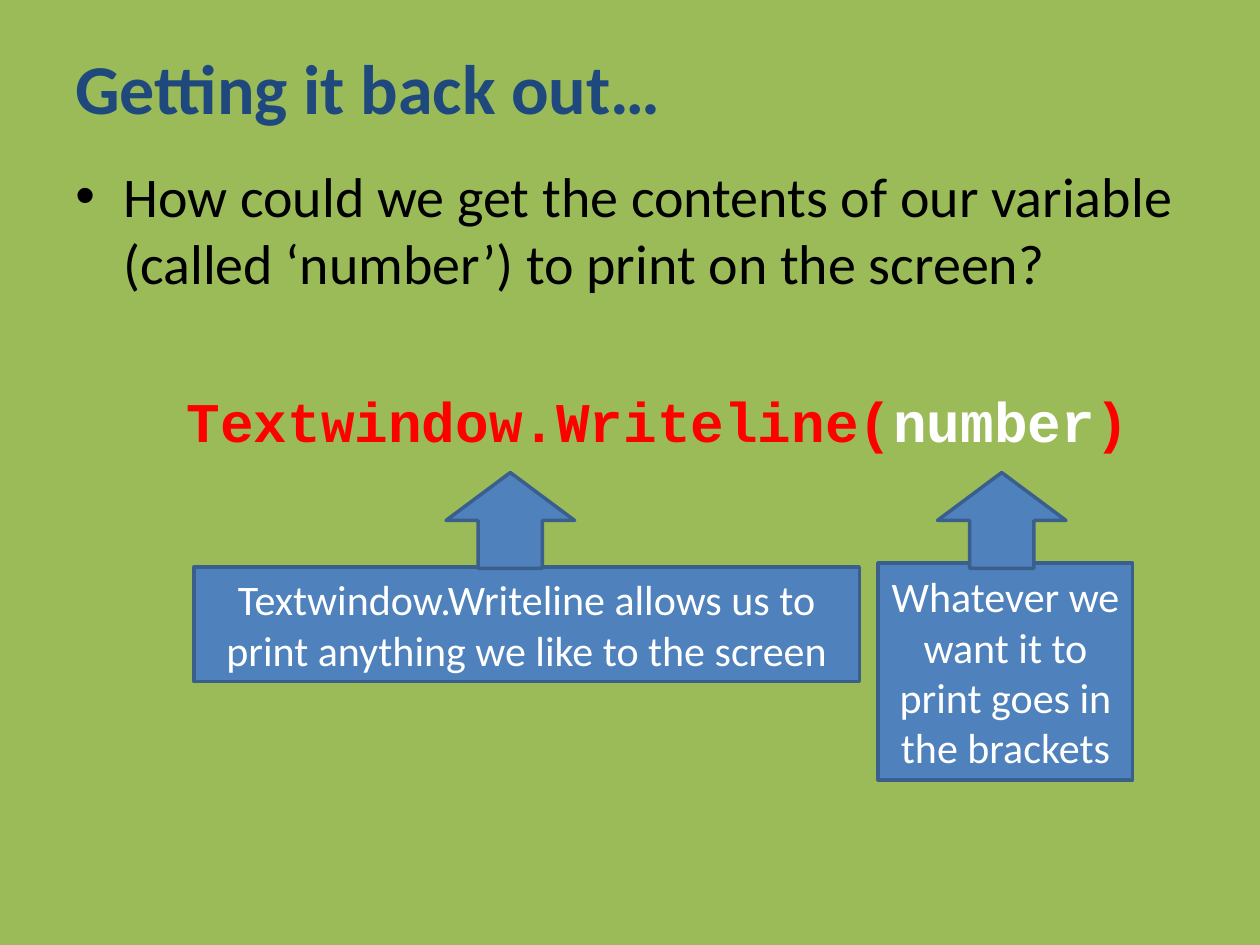
import pptx
import pptx.util
import pptx.dml.color
import pptx.enum.shapes
import pptx.enum.text
import pptx.oxml.ns
import lxml.etree

WIDTH, HEIGHT = pptx.util.Inches(10), pptx.util.Inches(7.5)
COLOURS = {
    "background": "9BBB59",
    "title": "1F497D",
    "body": "000000",
    "code": "FF0000",
    "light": "FFFFFF",
    "callout": "4F81BD",
    "outline": "3A5F8C",
}
ANCHOR = pptx.enum.text.MSO_ANCHOR
ALIGN = pptx.enum.text.PP_ALIGN
SHAPE = pptx.enum.shapes.MSO_SHAPE


def colour(key):
    return pptx.dml.color.RGBColor.from_string(COLOURS[key])


def percent_box(left, top, width, height):
    return [round(share * side / 100) for share, side in
            zip((left, top, width, height), (WIDTH, HEIGHT, WIDTH, HEIGHT))]


def apply(target, formats):
    for attribute, value in formats.items():
        setattr(target, attribute, value)


def write(paragraph, text, key, size, name="Calibri", bold=False):
    run = paragraph.add_run()
    run.text = text
    apply(run.font, {"name": name, "size": pptx.util.Pt(size), "bold": bold})
    run.font.color.rgb = colour(key)


def indent(paragraph, left, first=0, bullet=None):
    properties = paragraph._p.get_or_add_pPr()
    properties.set("marL", str(pptx.util.Inches(left)))
    properties.set("indent", str(pptx.util.Inches(first)))
    if bullet:
        for tag, attribute, value in (("a:buFont", "typeface", "Arial"),
                                      ("a:buChar", "char", bullet)):
            lxml.etree.SubElement(
                properties, pptx.oxml.ns.qn(tag)).set(attribute, value)


def add_text_frame(slide, box, anchor):
    frame = slide.shapes.add_textbox(*percent_box(*box)).text_frame
    apply(frame, {"word_wrap": True, "vertical_anchor": anchor})
    return frame


def add_title(slide, text):
    frame = add_text_frame(slide, (5, 4, 82, 10.27), ANCHOR.MIDDLE)
    write(frame.paragraphs[0], text, "title", 40, bold=True)


def add_body(slide, text, code_parts):
    frame = add_text_frame(slide, (5, 16.4, 90, 72.93), ANCHOR.TOP)
    question = frame.paragraphs[0]
    indent(question, 0.38, -0.38, "•")
    write(question, text, "body", 32)
    code = frame.add_paragraph()
    indent(code, 0.44)
    apply(code, {"alignment": ALIGN.CENTER, "space_before": pptx.util.Pt(52)})
    for part, key in code_parts:
        write(code, part, key, 32, "Courier New", True)


def add_filled(slide, kind, box):
    shape = slide.shapes.add_shape(kind, *percent_box(*box))
    shape.shadow.inherit = False
    shape.fill.solid()
    shape.fill.fore_color.rgb = colour("callout")
    shape.line.color.rgb = colour("outline")
    shape.line.width = pptx.util.Pt(2)
    return shape


def add_callout(slide, box, text):
    frame = add_filled(slide, SHAPE.RECTANGLE, box).text_frame
    apply(frame, {"word_wrap": True, "vertical_anchor": ANCHOR.MIDDLE})
    frame.paragraphs[0].alignment = ALIGN.CENTER
    write(frame.paragraphs[0], text, "light", 24)


def add_up_arrow(slide, left):
    arrow = add_filled(slide, SHAPE.RIGHT_ARROW, (left, 48.27, 7.6, 13.6))
    arrow.rotation = 270


def main():
    presentation = pptx.Presentation()
    apply(presentation, {"slide_width": WIDTH, "slide_height": HEIGHT})
    slide = presentation.slides.add_slide(presentation.slide_layouts[6])
    slide.background.fill.solid()
    slide.background.fill.fore_color.rgb = colour("background")

    add_title(slide, "Getting it back out…")
    add_body(
        slide,
        "How could we get the contents of our variable (called ‘number’) "
        "to print on the screen?",
        (("Textwindow.Writeline(", "code"), ("number", "light"), (")", "code")),
    )
    add_callout(slide, (15.4, 60, 52.8, 12.13),
                "Textwindow.Writeline allows us to print anything we like "
                "to the screen")
    add_callout(slide, (69.7, 59.6, 20.2, 22.93),
                "Whatever we want it to print goes in the brackets")
    for left in (36.7, 75.7):
        add_up_arrow(slide, left)
    presentation.save("out.pptx")


if __name__ == "__main__":
    main()
